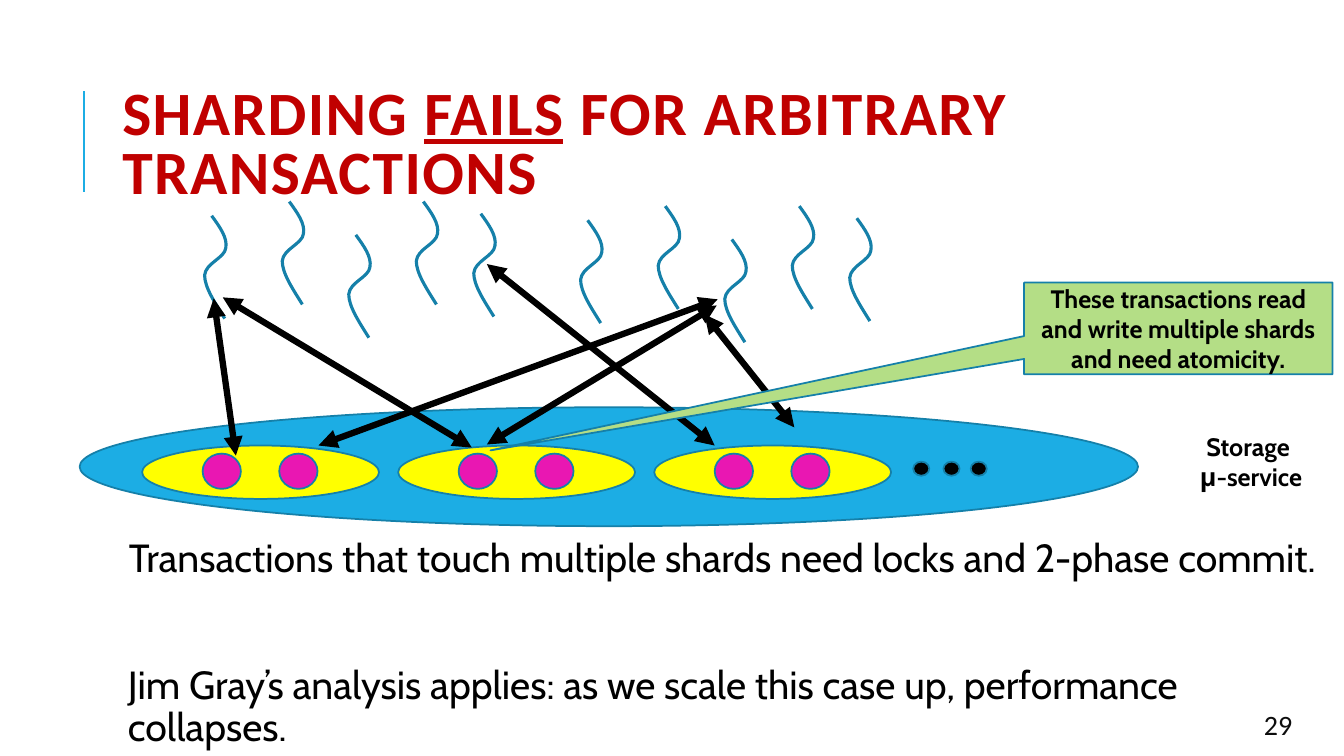
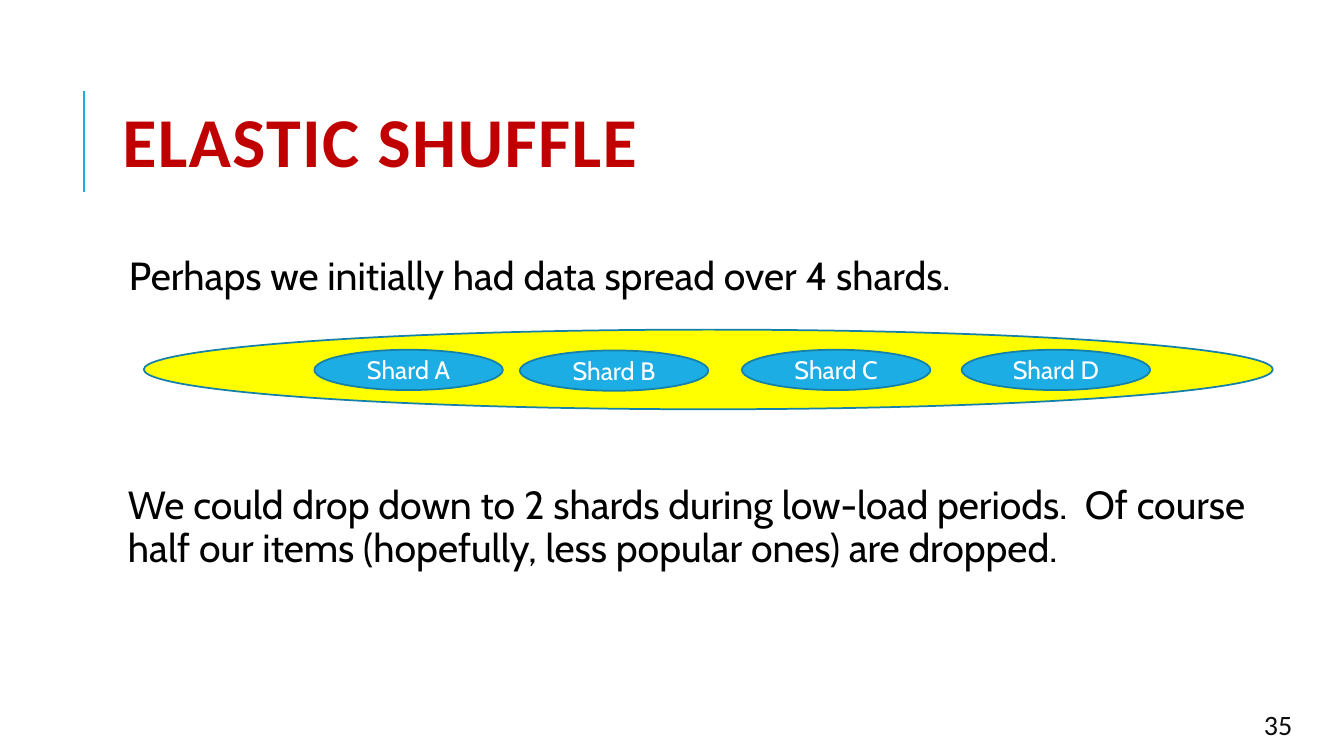
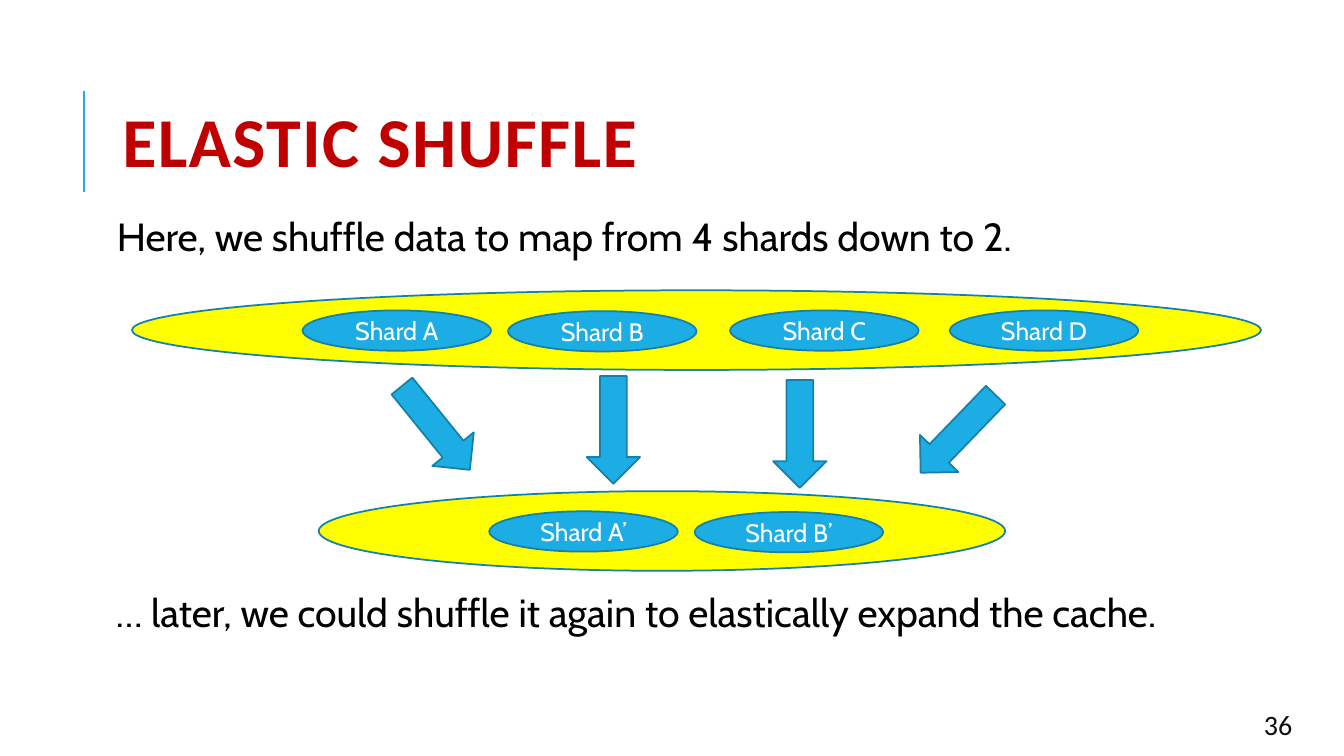
"""Build three slides on sharding; lengths are cells of a tenth-inch grid."""
from lxml import etree
from pptx import Presentation, util as u
from pptx.dml.color import RGBColor
from pptx.enum import shapes, text
from pptx.oxml.ns import qn

WIDE, HIGH = 133.33, 75
BLUE, EDGE, RED = "1CADE4", "1580A9", "C00000"
YELLOW, PINK, GREEN = "FFFF00", "E917B2", "B4DE86"
BLACK, WHITE, GREY = "000000", "FFFFFF", "0D0D0D"
HEAD, BODY = "Calibri", "Cabin"
KIND = shapes.MSO_SHAPE
MID, TOP = text.MSO_ANCHOR.MIDDLE, text.MSO_ANCHOR.TOP
MIDST = text.PP_ALIGN.CENTER
SLOTS = ((16.92, 2), (37.3, 2.07), (59.33, 2), (81.13, 2))
WAVES = ((0, 0), (7.7, -1.4), (14.3, 1.9), (21, -1.4), (26.7, -0.2))
CURVE = (
    (0.7, 0), (1.5, 1.1), (2.3, 2.2), (2.1, 3.2), (2, 4.2),
    (0.1, 4.7), (0, 5.9), (0, 7.1), (1, 8.6), (2, 10.2),
)
LINKS = (
    (21.2, 29.6, 23.4, 45.2), (71.2, 29.7, 31.6, 44.2),
    (22.1, 29.5, 46.8, 44.4), (71.1, 30.3, 48.3, 44.1),
    (48.3, 26.2, 70.9, 44.2), (69.9, 31.2, 78.8, 42.4),
)


def cell(*nums):
    """Turn grid cells into lengths."""
    return [u.Inches(n / 10) for n in nums]


def hue(code):
    """Turn a hex string into a colour."""
    return RGBColor.from_string(code)


def add_run(par, words, size, font, color, bold=False, under=False):
    """Add one styled run and return it."""
    run = par.add_run()
    run.text = words
    face = run.font
    face.size, face.name, face.bold = u.Pt(size), font, bold
    face.color.rgb = hue(color)
    if under:
        face.underline = True
    return run


def add_box(sl, at, anchor=TOP):
    """Add a wrapping text box and return its frame."""
    frame = sl.shapes.add_textbox(*cell(*at)).text_frame
    frame.word_wrap = True
    frame.vertical_anchor = anchor
    return frame


def add_body(sl, at, *lines, gap=12):
    """Add body paragraphs, with a gap in points before each later one."""
    frame = add_box(sl, at)
    frame.margin_left, frame.margin_right = cell(1.5, 0.5)
    frame.margin_top, frame.margin_bottom = cell(0.5, 0.5)
    for i, line in enumerate(lines):
        par = frame.add_paragraph() if i else frame.paragraphs[0]
        par.line_spacing = 0.9
        par.space_before, par.space_after = u.Pt(gap if i else 12), u.Pt(2)
        if not i:
            par._p.get_or_add_pPr().set("indent", str(cell(0.1)[0]))
        add_run(par, line, 28, BODY, BLACK)


def add_form(host, kind, at, fill, words="", color=WHITE, bold=False, turn=0):
    """Add an outlined preset shape with optional centred text."""
    form = host.shapes.add_shape(kind, *cell(*at))
    form.shadow.inherit = False
    form.rotation = turn
    form.fill.solid()
    form.fill.fore_color.rgb = hue(fill)
    form.line.color.rgb, form.line.width = hue(EDGE), u.Pt(1.25)
    if words:
        frame = form.text_frame
        frame.word_wrap, frame.vertical_anchor = True, MID
        par = frame.paragraphs[0]
        par.alignment = MIDST
        add_run(par, words, 18, BODY, color, bold)
    return form


def add_line(sl, ends, color, width, tips=False):
    """Add a straight line, with arrowheads at both ends on request."""
    line = sl.shapes.add_connector(shapes.MSO_CONNECTOR.STRAIGHT, *cell(*ends))
    line.line.color.rgb, line.line.width = hue(color), u.Pt(width)
    if tips:
        stroke = line.line._get_or_add_ln()
        for tag in ("a:headEnd", "a:tailEnd"):
            etree.SubElement(stroke, qn(tag), type="triangle")
    etree.SubElement(line._element.spPr, qn("a:effectLst"))


def add_wave(sl, x, y):
    """Draw one thread as three joined cubic curves."""
    dots = [cell(x + a, y + b) for a, b in CURVE]
    pen = sl.shapes.build_freeform(*dots[0])
    pen.add_line_segments(dots[1:], close=False)
    wave = pen.convert_to_shape()
    wave.shadow.inherit = False
    wave.fill.background()
    wave.line.color.rgb, wave.line.width = hue(EDGE), u.Pt(2.25)
    wave.width = cell(2.1)[0]
    track = next(wave._element.iter(qn("a:path")))
    track.set("w", str(wave.width))
    legs = track.findall(qn("a:lnTo"))
    for i in range(0, len(legs), 3):
        arc = etree.SubElement(track, qn("a:cubicBezTo"))
        for leg in legs[i:i + 3]:
            arc.append(leg[0])
            track.remove(leg)


def add_pool(sl, x, y, wide, *names):
    """Draw a yellow pool holding one oval for each named shard."""
    add_form(sl, KIND.OVAL, (x, y, wide, 7.9), YELLOW)
    for name, (right, down) in zip(names, SLOTS):
        add_form(sl, KIND.OVAL, (x + right, y + down, 18.7, 4), BLUE, name)


def add_page(deck, num, size, wide, *runs):
    """Add a slide with rule, title runs and page number."""
    sl = deck.slides.add_slide(deck.slide_layouts[6])
    add_line(sl, (8.3, 19, 8.3, 9), BLUE, 1.5)
    par = add_box(sl, (11.15, 6.4, wide, 16.4), MID).paragraphs[0]
    par.line_spacing = 0.8
    for words, under in runs:
        run = add_run(par, words, size, HEAD, RED, True, under)
        run._r.get_or_add_rPr().set("spc", "100")
    par = add_box(sl, (124.4, 70, 7.7, 3.8), MID).paragraphs[0]
    add_run(par, str(num), 20, HEAD, GREY)
    return sl


def add_store(sl):
    """Draw the storage service with its shards and label."""
    add_form(sl, KIND.OVAL, (7.9, 40.4, 105, 11.8), BLUE)
    par = add_box(sl, (116, 42.3, 16.2, 7.1)).paragraphs[0]
    par.alignment = MIDST
    add_run(par, "Storage ", 18, BODY, BLACK, True)
    par.add_line_break()
    add_run(par, "μ-service", 18, BODY, BLACK, True)
    for i in (0, 2, 1):
        x = 14.1 + 25.4 * i
        pod = sl.shapes.add_group_shape()
        add_form(pod, KIND.OVAL, (x, 44.2, 23.5, 5.3), YELLOW)
        for step in (6, 13.6):
            add_form(pod, KIND.OVAL, (x + step, 45, 3.8, 3.5), PINK)
    for x in (90.6, 93.6, 96.3):
        add_form(sl, KIND.OVAL, (x, 45.8, 1.6, 1.4), BLACK)


def make_fails(deck):
    """Build the slide on transactions that span shards."""
    sl = add_page(deck, 29, 44, 121, ("SHARDING ", False), ("FAILS", True),
                  (" FOR ARBITRARY TRANSACTIONS", False))
    add_body(sl, (11.2, 52.9, 121, 16.1),
             "Transactions that touch multiple shards need locks and 2-phase commit.",
             "Jim Gray’s analysis applies: as we scale this case up, performance collapses.",
             gap=58.8)
    add_store(sl)
    for x, y in ((20.3, 21.4), (57.6, 21.85)):
        for right, down in WAVES:
            add_wave(sl, x + right, y + down)
    for ends in LINKS:
        add_line(sl, ends, BLACK, 4.5, tips=True)
    note = add_form(sl, KIND.RECTANGULAR_CALLOUT, (101.6, 28.03, 30.6, 9.1), GREEN,
                    "These transactions read and write multiple shards and need atomicity.",
                    BLACK, True)
    note.adjustments[0], note.adjustments[1] = -2.23, 1.33


def make_spread(deck):
    """Build the slide with data over four shards."""
    sl = add_page(deck, 35, 50, 118, ("ELASTIC SHUFFLE", False))
    add_body(sl, (11.2, 25, 118, 44),
             "Perhaps we initially had data spread over 4 shards.",
             "We could drop down to 2 shards during low-load periods.  Of course "
             "half our items (hopefully, less popular ones) are dropped.", gap=131.4)
    add_pool(sl, 14.27, 32.7, 112, "Shard A", "Shard B", "Shard C", "Shard D")


def make_merge(deck):
    """Build the slide that maps four shards to two."""
    sl = add_page(deck, 36, 50, 118, ("ELASTIC SHUFFLE", False))
    add_body(sl, (10, 21.1, 118, 44),
             "Here, we shuffle data to map from 4 shards down to 2.")
    add_pool(sl, 13.1, 28.8, 112, "Shard A", "Shard B", "Shard C", "Shard D")
    add_pool(sl, 31.62, 48.73, 68.1, "Shard A’", "Shard B’")
    for x, y, turn in ((58.2, 37.3, 0), (76.7, 37.7, 0),
                       (92.4, 37.7, 44), (40.6, 37.1, 321)):
        add_form(sl, KIND.DOWN_ARROW, (x, y, 5.3, 10.7), BLUE, turn=turn)
    add_body(sl, (9.9, 58.4, 118, 6),
             "… later, we could shuffle it again to elastically expand the cache.")


def main():
    """Build and save the deck."""
    deck = Presentation()
    deck.slide_width, deck.slide_height = cell(WIDE, HIGH)
    make_fails(deck)
    make_spread(deck)
    make_merge(deck)
    deck.save("out.pptx")


if __name__ == "__main__":
    main()
